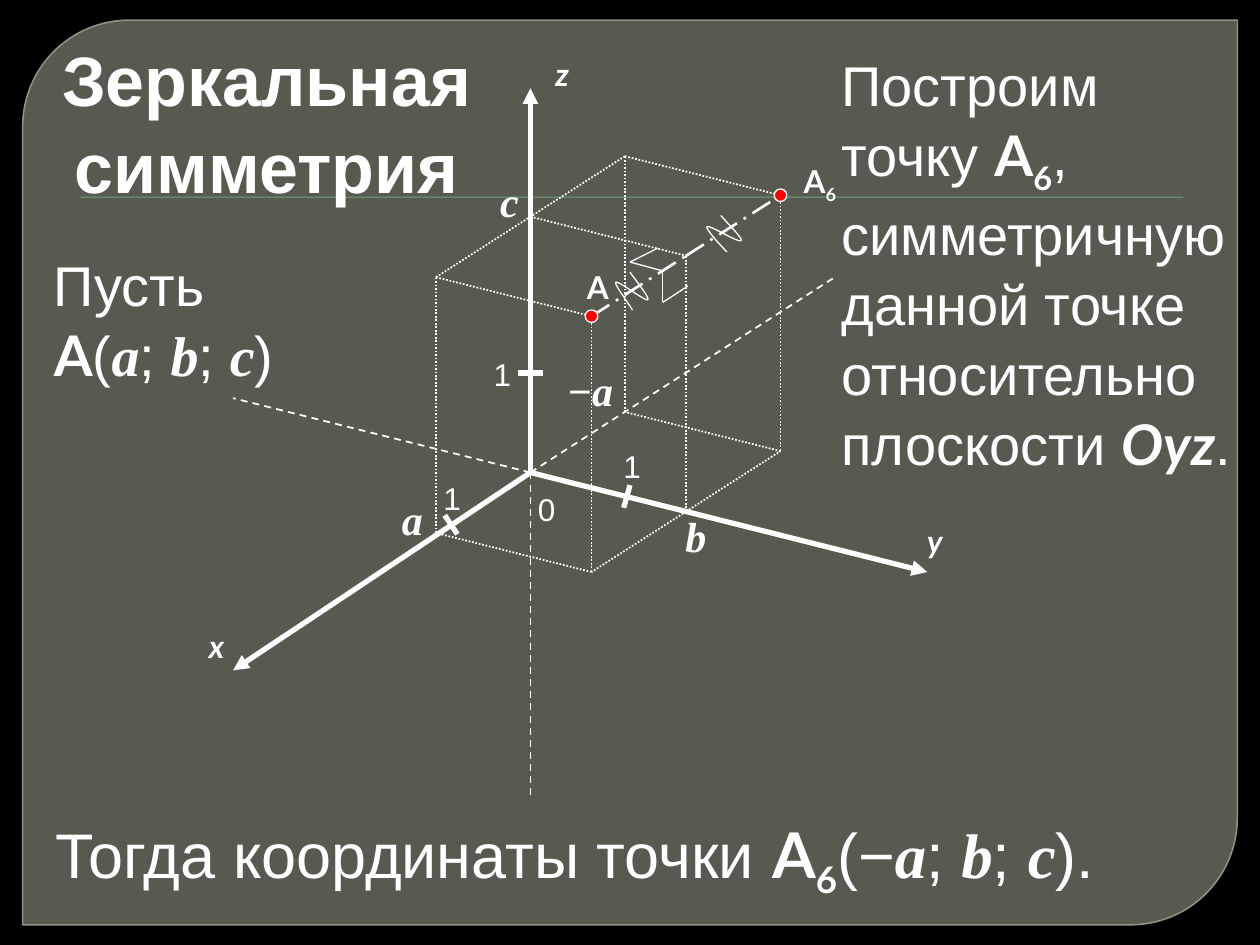
from itertools import pairwise

from lxml.etree import SubElement
from pptx import Presentation
from pptx.dml.color import RGBColor
from pptx.enum.dml import MSO_LINE
from pptx.enum.shapes import MSO_CONNECTOR, MSO_SHAPE
from pptx.enum.text import MSO_ANCHOR, MSO_AUTO_SIZE, PP_ALIGN
from pptx.oxml.ns import qn
from pptx.util import Inches, Pt

COLUMNS, ROWS = 100, 75
WHITE, RED, BLACK = "FFFFFF", "FF0000", "000000"
PANEL, PANEL_EDGE, RULE = "888B7B", "9DA090", "72A376"

FONTS = {
    "plain": {"name": "Arial", "bold": False, "italic": False},
    "title": {"name": "Arial", "bold": True, "italic": False},
    "point": {"name": "Lato", "bold": True, "italic": False},
    "index": {"name": "Lato", "bold": True, "italic": False},
    "axis": {"name": "Lato", "bold": True, "italic": True},
    "variable": {"name": "Times New Roman", "bold": True, "italic": True},
}

ORIGIN = (42.1, 37.5)
UNIT_A, UNIT_B, UNIT_C = (-7.5, 4.8), (12.35, 3.1), (0, -20.3)


def color(value):
    return RGBColor.from_string(value)


def project(a, b, c):
    return tuple(
        start + a * x + b * y + c * z
        for start, x, y, z in zip(ORIGIN, UNIT_A, UNIT_B, UNIT_C)
    )


def curve(start, *segments, steps=12):
    points = [start]
    for first, second, end in segments:
        begin = points[-1]
        for step in range(1, steps + 1):
            t = step / steps
            weights = ((1 - t) ** 3, 3 * t * (1 - t) ** 2, 3 * t * t * (1 - t), t ** 3)
            corners = (begin, first, second, end)
            points.append(tuple(
                sum(weight * corner[i] for weight, corner in zip(weights, corners))
                for i in (0, 1)
            ))
    return points


class SlideBuilder:
    def __init__(self, presentation):
        self.presentation = presentation
        self.slide = presentation.slides.add_slide(presentation.slide_layouts[5])
        self.shapes = self.slide.shapes
        self.slide.background.fill.solid()
        self.slide.background.fill.fore_color.rgb = color(BLACK)

    def column(self, value):
        return round(self.presentation.slide_width * value / COLUMNS)

    def row(self, value):
        return round(self.presentation.slide_height * value / ROWS)

    def box(self, left, top, width, height):
        return self.column(left), self.row(top), self.column(width), self.row(height)

    def transparency(self, fill, percent):
        choice = fill._xPr.find(qn("a:solidFill"))[0]
        SubElement(choice, qn("a:alpha")).set("val", str(percent * 1000))

    def shape(self, kind, area, fill, edge=None, width=0.75):
        shape = self.shapes.add_shape(kind, *self.box(*area))
        shape.shadow.inherit = False
        shape.fill.solid()
        shape.fill.fore_color.rgb = color(fill)
        if edge:
            shape.line.color.rgb = color(edge)
            shape.line.width = Pt(width)
        else:
            shape.line.fill.background()
        return shape

    def panel(self, area):
        panel = self.shape(MSO_SHAPE.ROUND_2_DIAG_RECTANGLE, area, PANEL, PANEL_EDGE, 0.87)
        panel.adjustments[0], panel.adjustments[1] = 0.118, 0
        self.transparency(panel.fill, 65)
        self.transparency(panel.line.fill, 88)

    def line(self, start, end, width=1, dash=None, arrow=False):
        connector = self.shapes.add_connector(
            MSO_CONNECTOR.STRAIGHT,
            self.column(start[0]), self.row(start[1]),
            self.column(end[0]), self.row(end[1]),
        )
        connector.line.color.rgb = color(WHITE)
        connector.line.width = Pt(width)
        if dash:
            connector.line.dash_style = dash
        if arrow:
            outline = connector._element.spPr.find(qn("a:ln"))
            SubElement(outline, qn("a:tailEnd")).set("type", "triangle")
        SubElement(connector._element.spPr, qn("a:effectLst"))

    def squiggle(self, points):
        corners = [(self.column(x), self.row(y)) for x, y in points]
        builder = self.shapes.build_freeform(*corners[0])
        builder.add_line_segments(corners[1:], close=False)
        shape = builder.convert_to_shape()
        shape.shadow.inherit = False
        shape.fill.background()
        shape.line.color.rgb = color(WHITE)
        shape.line.width = Pt(0.75)

    def dot(self, center, size=1):
        area = (center[0] - size / 2, center[1] - size / 2, size, size)
        self.shape(MSO_SHAPE.OVAL, area, RED, WHITE)

    def set_text(self, shape, runs, size, leading, align=PP_ALIGN.LEFT):
        frame = shape.text_frame
        settings = {"word_wrap": True, "auto_size": MSO_AUTO_SIZE.NONE,
                    "vertical_anchor": MSO_ANCHOR.TOP}
        for name, value in settings.items():
            setattr(frame, name, value)
        paragraph = frame.paragraphs[0]
        paragraph.alignment = align
        paragraph.line_spacing = leading
        for text, style in runs:
            run = paragraph.add_run()
            run.text = text
            for name, value in {**FONTS[style], "size": Pt(size)}.items():
                setattr(run.font, name, value)
            run.font.color.rgb = color(WHITE)
            if style == "index":
                run._r.get_or_add_rPr().set("baseline", "-25000")

    def text(self, area, runs, size, leading=1.0):
        self.set_text(self.shapes.add_textbox(*self.box(*area)), runs, size, leading)

    def title(self, area, text, size, leading):
        title = self.shapes.title
        title.left, title.top, title.width, title.height = self.box(*area)
        self.set_text(title, [(text, "title")], size, leading, PP_ALIGN.CENTER)
        title._element.getparent().append(title._element)


def draw_axes(builder):
    for end in ((66.1, 22.1), (18.5, 31.6), (42.1, 63.3)):
        builder.line(ORIGIN, end, dash=MSO_LINE.DASH)
    for end in ((18.5, 53.2), (73.6, 45.4), (42.1, 7)):
        builder.line(ORIGIN, end, width=3, arrow=True)
    for start, end in (((41.1, 29.6), (43.1, 29.6)),
                       ((49.5, 40.3), (50, 38.5)),
                       ((35.3, 40.9), (36.3, 42.4))):
        builder.line(start, end, width=3)


def draw_boxes(builder):
    edges = [((0, 1, 0), (0, 1, 1)), ((0, 0, 1), (0, 1, 1))]
    for side in (1, -1):
        outline = [(0, 1, 0), (side, 1, 0), (side, 0, 0),
                   (side, 0, 1), (side, 1, 1), (side, 1, 0)]
        edges += [*pairwise(outline), ((side, 0, 1), (0, 0, 1))]
    for start, end in edges:
        builder.line(project(*start), project(*end), dash=MSO_LINE.ROUND_DOT)


def draw_reflection(builder):
    point, middle, image = (project(side, 1, 1) for side in (1, 0, -1))
    for start, end in ((point, middle), (middle, image)):
        builder.line(start, end, width=1.5, dash=MSO_LINE.LONG_DASH_DOT)
    builder.squiggle(curve(
        (50.2, 24.6),
        ((49.5, 23.5), (48.7, 22.5), (48.9, 22.4)),
        ((49.1, 22.3), (51.2, 23.9), (51.4, 23.8)),
        ((51.6, 23.7), (50.8, 22.7), (50, 21.6)),
    ))
    builder.squiggle(curve(
        (57.7, 20),
        ((56.8, 19.1), (56, 18.1), (56.1, 18)),
        ((56.3, 17.8), (58.6, 19.3), (58.8, 19.1)),
        ((59, 19), (58.1, 18.1), (57.2, 17.1)),
    ))
    for right_angle in (((52.6, 21.6), (52.6, 24), (54.6, 22.7)),
                        ((52.6, 21.5), (50, 20.8), (52.2, 19.7))):
        for start, end in pairwise(right_angle):
            builder.line(start, end, width=0.75)
    builder.dot(point)
    builder.dot(image)


def draw_labels(builder):
    for text, style, left, top in (
        ("x", "axis", 15.6, 49.3), ("y", "axis", 72.6, 40.9), ("z", "axis", 43.1, 3.9),
        ("0", "plain", 41.7, 38.4), ("1", "plain", 48.5, 35),
        ("1", "plain", 38.2, 27.7), ("1", "plain", 34.2, 37.5),
        ("A", "point", 45.6, 20.8),
    ):
        builder.text((left, top, 4.4, 4), [(text, style)], 18)
    builder.text((62.8, 12.4, 5.2, 4), [("A", "point"), ("6", "index")], 18)
    for text, left, top in (("a", 30.9, 38.7), ("b", 53.4, 40),
                            ("c", 38.7, 13.4), ("−a", 44, 28.4)):
        builder.text((left, top, 5.9, 5), [(text, "variable")], 24)


def add_statements(builder):
    coordinates = [("a", "variable"), ("; ", "plain"), ("b", "variable"),
                   ("; ", "plain"), ("c", "variable")]
    image = [("A", "point"), ("6", "index")]
    builder.title((2.3, 2.1, 37.7, 14.5), "Зеркальная симметрия", 40, 1.04)
    builder.text((3.3, 19.2, 20.7, 11.8),
                 [("Пусть ", "plain"), ("A", "point"), ("(", "plain"),
                  *coordinates, (")", "plain")], 32, 1.04)
    builder.text((65.8, 3.3, 34.2, 33.3),
                 [("Построим точку ", "plain"), *image,
                  (", симметричную данной точке относительно плоскости ", "plain"),
                  ("Oyz", "axis"), (".", "plain")], 32, 1.04)
    builder.text((3.4, 64.2, 94.1, 7.1),
                 [("Тогда координаты точки ", "plain"), *image, ("(−", "plain"),
                  *coordinates, (").", "plain")], 36)


def main():
    presentation = Presentation()
    presentation.slide_width, presentation.slide_height = Inches(10), Inches(7.5)
    builder = SlideBuilder(presentation)
    builder.panel((1.8, 1.6, 96.4, 71.8))
    builder.shape(MSO_SHAPE.RECTANGLE, (6.4, 15.6, 87.5, 0.1), RULE)
    draw_axes(builder)
    draw_boxes(builder)
    draw_reflection(builder)
    draw_labels(builder)
    add_statements(builder)
    presentation.save("out.pptx")


if __name__ == "__main__":
    main()
